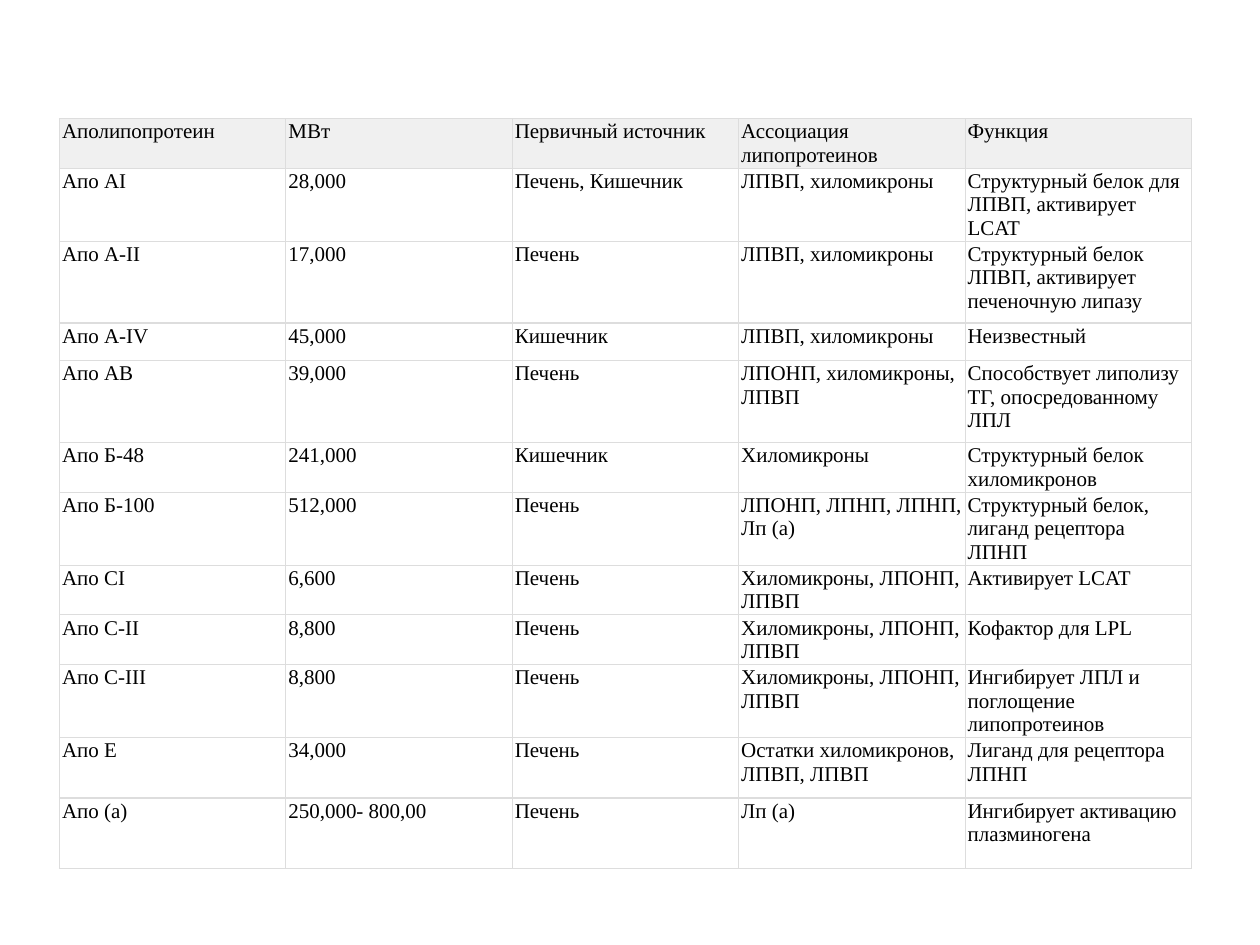
from lxml import etree
from pptx import Presentation
from pptx.dml.color import RGBColor
from pptx.enum.text import MSO_ANCHOR, PP_ALIGN
from pptx.oxml.ns import qn
from pptx.util import Cm, Pt

BLANK_LAYOUT = 6
TOP = MSO_ANCHOR.TOP
LEFT = PP_ALIGN.LEFT

COLORS = {"text": "000000", "header": "F0F0F0", "body": "FFFFFF", "border": "DDDDDD"}

HEADER = ["Аполипопротеин", "МВт", "Первичный источник", "Ассоциация липопротеинов", "Функция"]

# Each row: height in cm, then its cells
ROWS = [
    (0.99, HEADER),
    (1.22, ["Апо AI", "28,000", "Печень, Кишечник", "ЛПВП, хиломикроны",
            "Структурный белок для ЛПВП, активирует LCAT"]),
    (1.65, ["Апо А-II", "17,000", "Печень", "ЛПВП, хиломикроны",
            "Структурный белок ЛПВП, активирует печеночную липазу"]),
    (0.76, ["Апо А-IV", "45,000", "Кишечник", "ЛПВП, хиломикроны", "Неизвестный"]),
    (1.65, ["Апо АВ", "39,000", "Печень", "ЛПОНП, хиломикроны, ЛПВП",
            "Способствует липолизу ТГ, опосредованному ЛПЛ"]),
    (0.99, ["Апо Б-48", "241,000", "Кишечник", "Хиломикроны",
            "Структурный белок хиломикронов"]),
    (1.22, ["Апо Б-100", "512,000", "Печень", "ЛПОНП, ЛПНП, ЛПНП, Лп (а)",
            "Структурный белок, лиганд рецептора ЛПНП"]),
    (0.99, ["Апо CI", "6,600", "Печень", "Хиломикроны, ЛПОНП, ЛПВП", "Активирует LCAT"]),
    (0.99, ["Апо C-II", "8,800", "Печень", "Хиломикроны, ЛПОНП, ЛПВП", "Кофактор для LPL"]),
    (1.42, ["Апо C-III", "8,800", "Печень", "Хиломикроны, ЛПОНП, ЛПВП",
            "Ингибирует ЛПЛ и поглощение липопротеинов"]),
    (1.22, ["Апо Е", "34,000", "Печень", "Остатки хиломикронов, ЛПВП, ЛПВП",
            "Лиганд для рецептора ЛПНП"]),
    (1.42, ["Апо (а)", "250,000- 800,00", "Печень", "Лп (а)",
            "Ингибирует активацию плазминогена"]),
]


class SlideBuilder:
    """Holds the table style and the current slide."""

    font_name = "Times New Roman"
    font_size = Pt(12)
    border_width = Pt(0.75)
    margin_x = Cm(0.05)
    margin_y = Cm(0.03)

    def __init__(self, slide):
        self.slide = slide

    def add_table(self, left, top, width, height, rows):
        column_count = len(rows[0][1])
        frame = self.slide.shapes.add_table(
            len(rows), column_count, Cm(left), Cm(top), Cm(width), Cm(height))
        table = frame.table
        for column in table.columns:
            column.width = Cm(width / column_count)
        for row_index, (row_height, texts) in enumerate(rows):
            table.rows[row_index].height = Cm(row_height)
            fill = COLORS["body" if row_index else "header"]
            for column_index, text in enumerate(texts):
                self.format_cell(table.cell(row_index, column_index), text, fill)
        frame.height = Cm(height)

    def format_cell(self, cell, text, fill):
        cell.text = text
        cell.vertical_anchor = TOP
        cell.margin_left = cell.margin_right = self.margin_x
        cell.margin_top = cell.margin_bottom = self.margin_y
        paragraph = cell.text_frame.paragraphs[0]
        paragraph.alignment = LEFT
        font = paragraph.font
        font.name = self.font_name
        font.size = self.font_size
        font.bold = False
        font.color.rgb = RGBColor.from_string(COLORS["text"])
        self.add_borders(cell)
        cell.fill.solid()
        cell.fill.fore_color.rgb = RGBColor.from_string(fill)

    def add_borders(self, cell):
        properties = cell._tc.get_or_add_tcPr()
        for side in ("a:lnL", "a:lnR", "a:lnT", "a:lnB"):
            line = etree.SubElement(properties, qn(side), w=str(self.border_width))
            solid_fill = etree.SubElement(line, qn("a:solidFill"))
            etree.SubElement(solid_fill, qn("a:srgbClr"), val=COLORS["border"])


def main():
    presentation = Presentation()
    presentation.slide_width = Cm(25.4)
    presentation.slide_height = Cm(19.05)
    slide = presentation.slides.add_slide(presentation.slide_layouts[BLANK_LAYOUT])

    # Apolipoprotein table
    builder = SlideBuilder(slide)
    builder.add_table(1.2, 2.39, 22.82, 15.77, ROWS)

    presentation.save("out.pptx")


if __name__ == "__main__":
    main()
